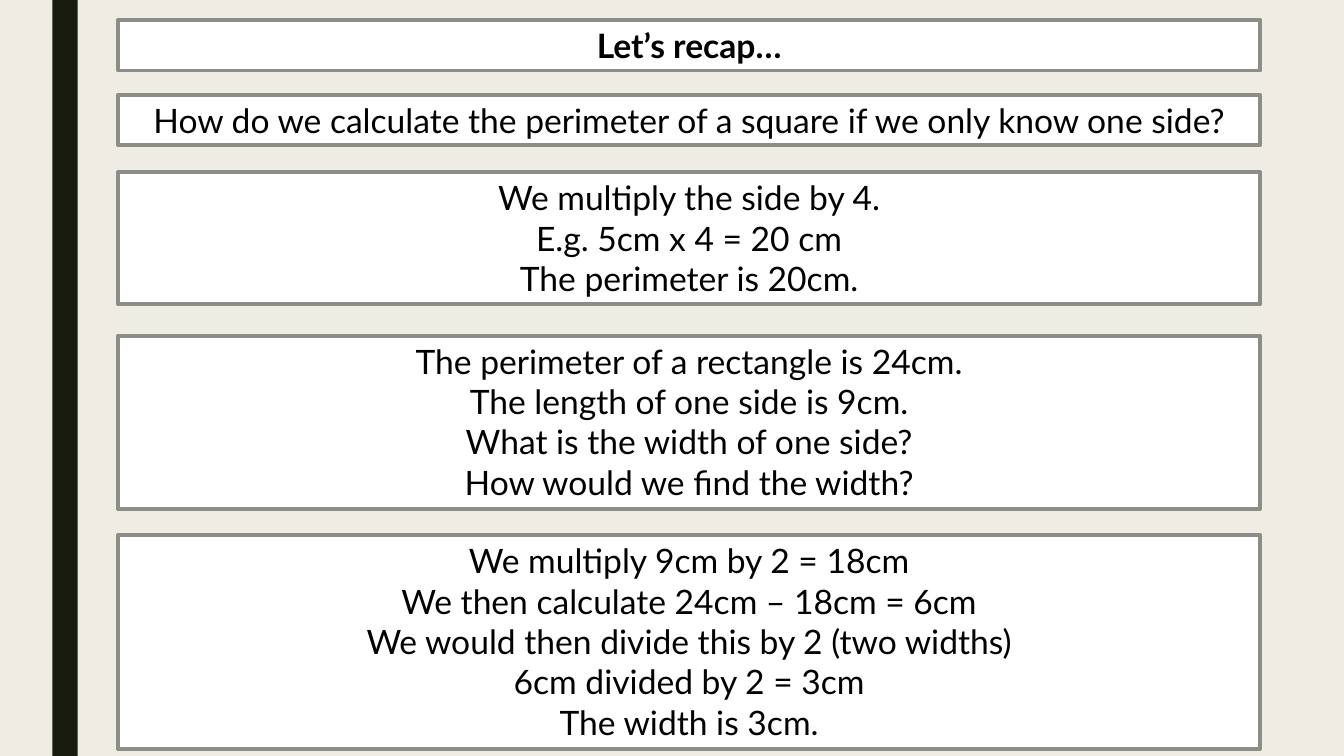
import dataclasses

import pptx
import pptx.dml.color
import pptx.enum.shapes
import pptx.enum.text
import pptx.util

RGBColor = pptx.dml.color.RGBColor

PX = 9144  # EMU per px, at 100 px to the inch
SLIDE_WIDTH, SLIDE_HEIGHT = 1333, 750
PANEL_LEFT, PANEL_WIDTH = 117, 1133

CREAM = RGBColor(0xEF, 0xED, 0xE3)
DARK_OLIVE = RGBColor(0x19, 0x1B, 0x0E)
GREY = RGBColor(0x8C, 0x8D, 0x86)
WHITE = RGBColor(0xFF, 0xFF, 0xFF)
BLACK = RGBColor(0x00, 0x00, 0x00)


@dataclasses.dataclass(frozen=True)
class Panel:
    top: int
    lines: tuple[str, ...]
    bold: bool = False

    @property
    def height(self) -> int:
        """Vertical insets plus one row per line of text."""
        return round(10 + 40.4 * len(self.lines))


PANELS = (
    Panel(20, ("Let’s recap…",), bold=True),
    Panel(94, ("How do we calculate the perimeter of a square if we only know one side?",)),
    Panel(171, (
        "We multiply the side by 4.",
        "E.g. 5cm x 4 = 20 cm",
        "The perimeter is 20cm.",
    )),
    Panel(333, (
        "The perimeter of a rectangle is 24cm.",
        "The length of one side is 9cm.",
        "What is the width of one side?",
        "How would we find the width?",
    )),
    Panel(531, (
        "We multiply 9cm by 2 = 18cm",
        "We then calculate 24cm – 18cm = 6cm",
        "We would then divide this by 2 (two widths)",
        "6cm divided by 2 = 3cm",
        "The width is 3cm.",
    )),
)


def add_rectangle(slide, left: int, top: int, width: int, height: int, fill: RGBColor):
    rectangle = slide.shapes.add_shape(
        pptx.enum.shapes.MSO_SHAPE.RECTANGLE,
        left * PX, top * PX, width * PX, height * PX,
    )
    rectangle.shadow.inherit = False
    rectangle.fill.solid()
    rectangle.fill.fore_color.rgb = fill
    rectangle.line.fill.background()
    return rectangle


def write_text(frame, lines: tuple[str, ...], *, size: int = 24, font: str = "Lato",
               color: RGBColor = BLACK, bold: bool = False) -> None:
    frame.word_wrap = True
    frame.auto_size = pptx.enum.text.MSO_AUTO_SIZE.SHAPE_TO_FIT_TEXT
    frame.vertical_anchor = pptx.enum.text.MSO_ANCHOR.TOP
    for index, line in enumerate(lines):
        paragraph = frame.add_paragraph() if index else frame.paragraphs[0]
        paragraph.alignment = pptx.enum.text.PP_ALIGN.CENTER
        run = paragraph.add_run()
        run.text = line
        run.font.size = pptx.util.Pt(size)
        run.font.name = font
        run.font.bold = bold
        run.font.color.rgb = color


def add_panel(slide, panel: Panel) -> None:
    box = add_rectangle(slide, PANEL_LEFT, panel.top, PANEL_WIDTH, panel.height, WHITE)
    box.line.color.rgb = GREY
    box.line.width = pptx.util.Pt(2.75)
    write_text(box.text_frame, panel.lines, bold=panel.bold)


def main() -> None:
    deck = pptx.Presentation()
    deck.slide_width = SLIDE_WIDTH * PX
    deck.slide_height = SLIDE_HEIGHT * PX
    slide = deck.slides.add_slide(deck.slide_layouts[6])

    # Background and side stripe
    slide.background.fill.solid()
    slide.background.fill.fore_color.rgb = CREAM
    add_rectangle(slide, 52, 0, 25, SLIDE_HEIGHT, DARK_OLIVE)

    # Questions and answers
    for panel in PANELS:
        add_panel(slide, panel)

    deck.save("out.pptx")


if __name__ == "__main__":
    main()
